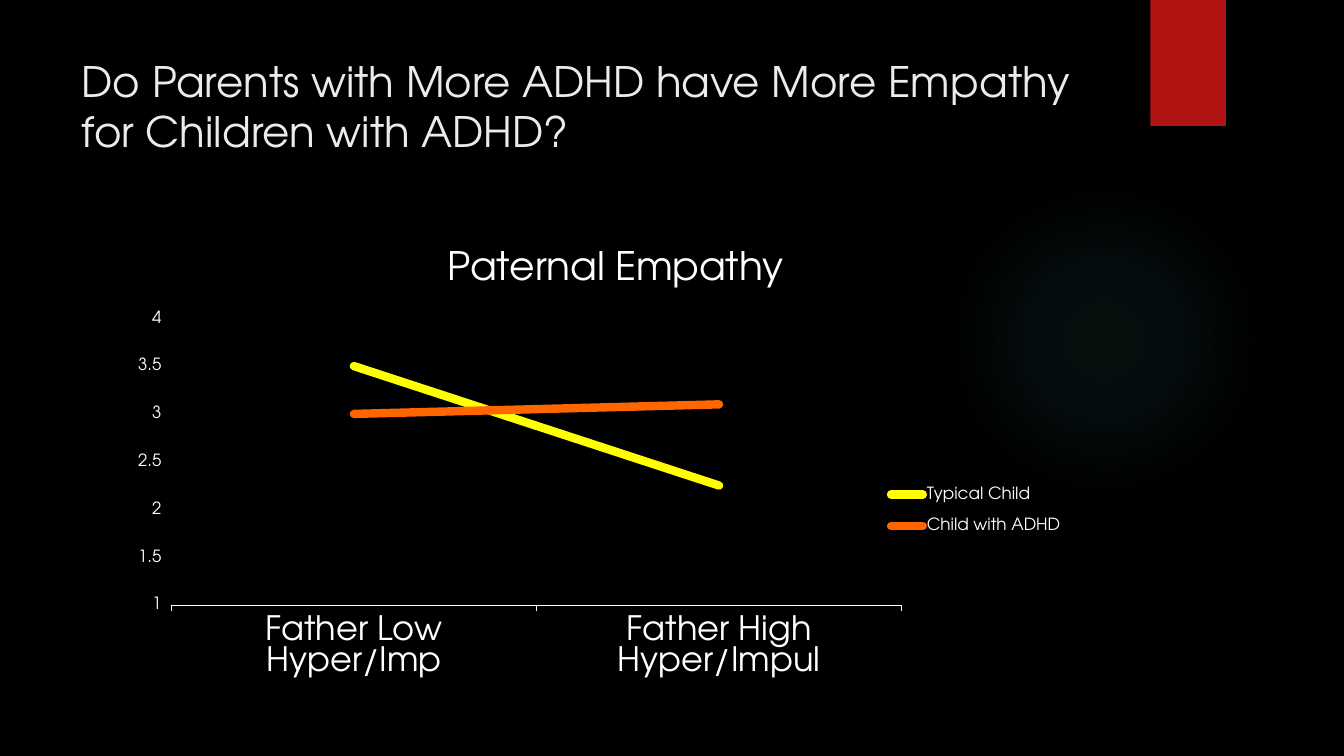
from lxml import etree
from pptx import Presentation
from pptx import util as u
from pptx.chart.data import CategoryChartData
from pptx.dml.color import RGBColor
from pptx.enum import chart as ch, shapes, text
from pptx.oxml import parse_xml
from pptx.oxml.ns import nsdecls, qn

FONT = "TeX Gyre Adventor"
COLORS = {
    "background": "000000",
    "title": "EBEBEB",
    "chart text": "FFFFFF",
    "tab": "B01513",
    "glow": "50B9C1",
    "Typical Child": "FFFF00",
    "Child with ADHD": "FF6600",
}


def style_font(font, size, color="chart text"):
    font.name = FONT
    font.size = u.Pt(size)
    font.bold = False
    font.color.rgb = RGBColor.from_string(COLORS[color])


def inner_layout(x, y, w, h, target=""):
    """Return a manual chart layout; lengths are fractions of the chart."""
    return parse_xml(
        f'<c:layout {nsdecls("c")}><c:manualLayout>{target}'
        '<c:xMode val="edge"/><c:yMode val="edge"/>'
        f'<c:x val="{x}"/><c:y val="{y}"/><c:w val="{w}"/><c:h val="{h}"/>'
        '</c:manualLayout></c:layout>')


presentation = Presentation()
presentation.slide_width = u.Inches(13.33)
presentation.slide_height = u.Inches(7.5)
slide = presentation.slides.add_slide(presentation.slide_layouts[5])
slide.background.fill.solid()
slide.background.fill.fore_color.rgb = RGBColor.from_string(COLORS["background"])

# Faint round glow
glow = slide.shapes.add_shape(
    shapes.MSO_SHAPE.OVAL, u.Inches(9.41), u.Inches(1.83), u.Inches(3.08), u.Inches(3.08))
glow.shadow.inherit = False
glow.line.fill.background()
stops = "".join(
    f'<a:gs pos="{position * 1000}"><a:srgbClr val="{COLORS["glow"]}">'
    f'<a:alpha val="{alpha * 1000}"/></a:srgbClr></a:gs>'
    for position, alpha in [(0, 7), (36, 6), (69, 0)])
glow._element.spPr.find(qn("a:prstGeom")).addnext(parse_xml(
    f'<a:gradFill {nsdecls("a")}><a:gsLst>{stops}</a:gsLst><a:path path="circle">'
    '<a:fillToRect l="50000" t="50000" r="50000" b="50000"/></a:path></a:gradFill>'))

# Red tab at the top edge
tab = slide.shapes.add_shape(
    shapes.MSO_SHAPE.RECTANGLE, u.Inches(11.41), 0, u.Inches(0.75), u.Inches(1.25))
tab.shadow.inherit = False
tab.fill.solid()
tab.fill.fore_color.rgb = RGBColor.from_string(COLORS["tab"])
tab.line.fill.background()

# Title
title = slide.shapes.title
title.left, title.top = u.Inches(0.71), u.Inches(0.5)
title.width, title.height = u.Inches(10.29), u.Inches(1.53)
title.text_frame.word_wrap = True
title.text_frame.auto_size = text.MSO_AUTO_SIZE.NONE
title.text_frame.vertical_anchor = text.MSO_ANCHOR.TOP
paragraph = title.text_frame.paragraphs[0]
paragraph.alignment = text.PP_ALIGN.LEFT
run = paragraph.add_run()
run.text = "Do Parents with More ADHD have More Empathy for Children with ADHD?"
style_font(run.font, 30, "title")

# Line chart
chart_data = CategoryChartData()
chart_data.categories = ["Father Low Hyper/Imp", "Father High Hyper/Impul"]
chart_data.add_series("Typical Child", (3.5, 2.25))
chart_data.add_series("Child with ADHD", (3, 3.1))
chart = slide.shapes.add_chart(
    ch.XL_CHART_TYPE.LINE, u.Inches(1.21), u.Inches(2.24),
    u.Inches(9.79), u.Inches(4.59), chart_data).chart
style_font(chart.font, 10)

chart.has_title = True
chart_title = chart.chart_title.text_frame.paragraphs[0].add_run()
chart_title.text = "Paternal Empathy"
style_font(chart_title.font, 28)
chart.chart_title.include_in_layout = False

chart.plots[0].vary_by_categories = False
for series in chart.plots[0].series:
    series.smooth = False
    series.marker.style = ch.XL_MARKER_STYLE.NONE
    series.format.line.width = u.Pt(6)
    series.format.line.color.rgb = RGBColor.from_string(COLORS[series.name])
    line = series.format.line._get_or_add_ln()
    line.set("cap", "rnd")
    etree.SubElement(line, qn("a:round"))

category_axis = chart.category_axis
category_axis.major_tick_mark = ch.XL_TICK_MARK.OUTSIDE
category_axis.format.line.width = u.Pt(0.75)
category_axis.format.line.color.rgb = RGBColor.from_string(COLORS["chart text"])
style_font(category_axis.tick_labels.font, 24)

value_axis = chart.value_axis
value_axis.minimum_scale, value_axis.maximum_scale = 1, 4
value_axis.major_unit = 0.5
value_axis.has_major_gridlines = False
value_axis.major_tick_mark = ch.XL_TICK_MARK.OUTSIDE
value_axis.format.line.fill.background()
style_font(value_axis.tick_labels.font, 12)

chart.has_legend = True
legend = chart.legend
legend.position = ch.XL_LEGEND_POSITION.RIGHT
legend.include_in_layout = False
style_font(legend.font, 12)

# Places of the plot and the legend inside the chart
plot_area = chart._chartSpace.chart.plotArea
for parent in (plot_area, legend._element):
    for layout in parent.findall(qn("c:layout")):
        parent.remove(layout)
plot_area.insert(0, inner_layout(0.05, 0.2, 0.74, 0.62, '<c:layoutTarget val="inner"/>'))
legend._element.find(qn("c:legendPos")).addnext(inner_layout(0.76, 0.53, 0.21, 0.17))

presentation.save("out.pptx")
